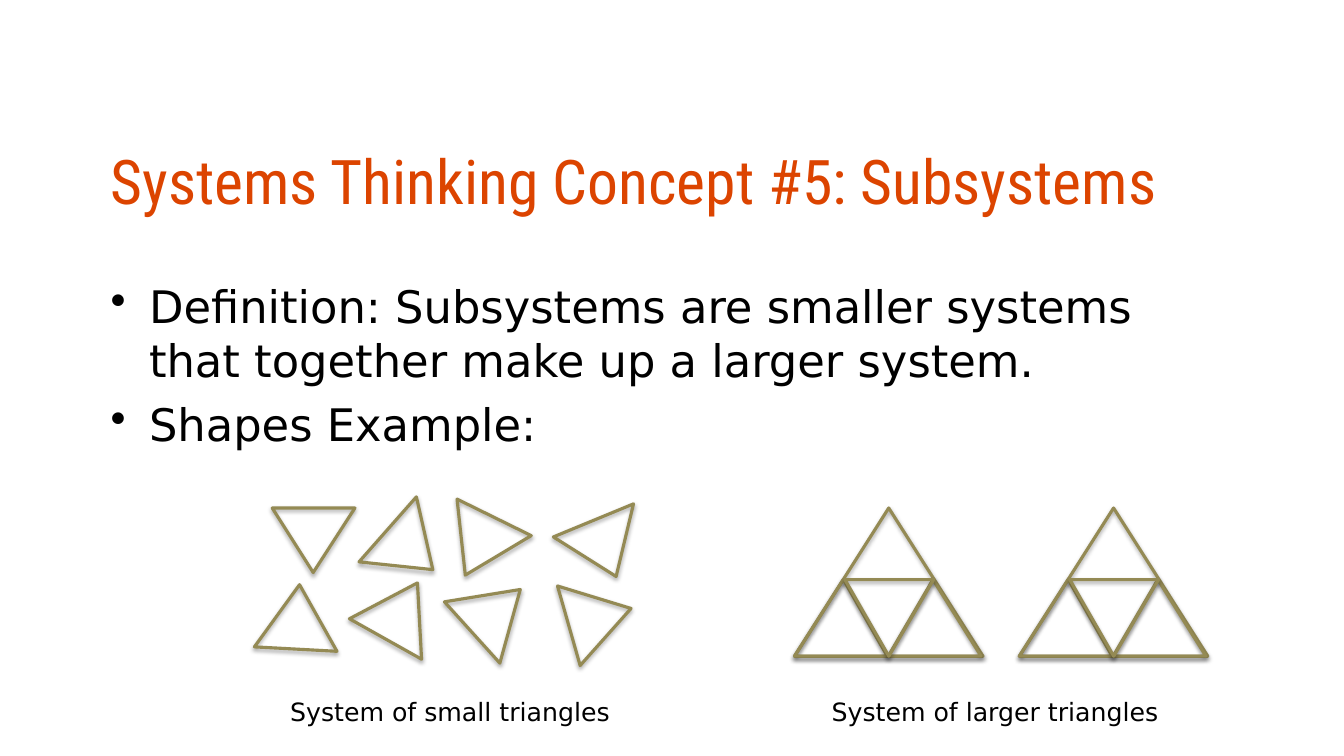
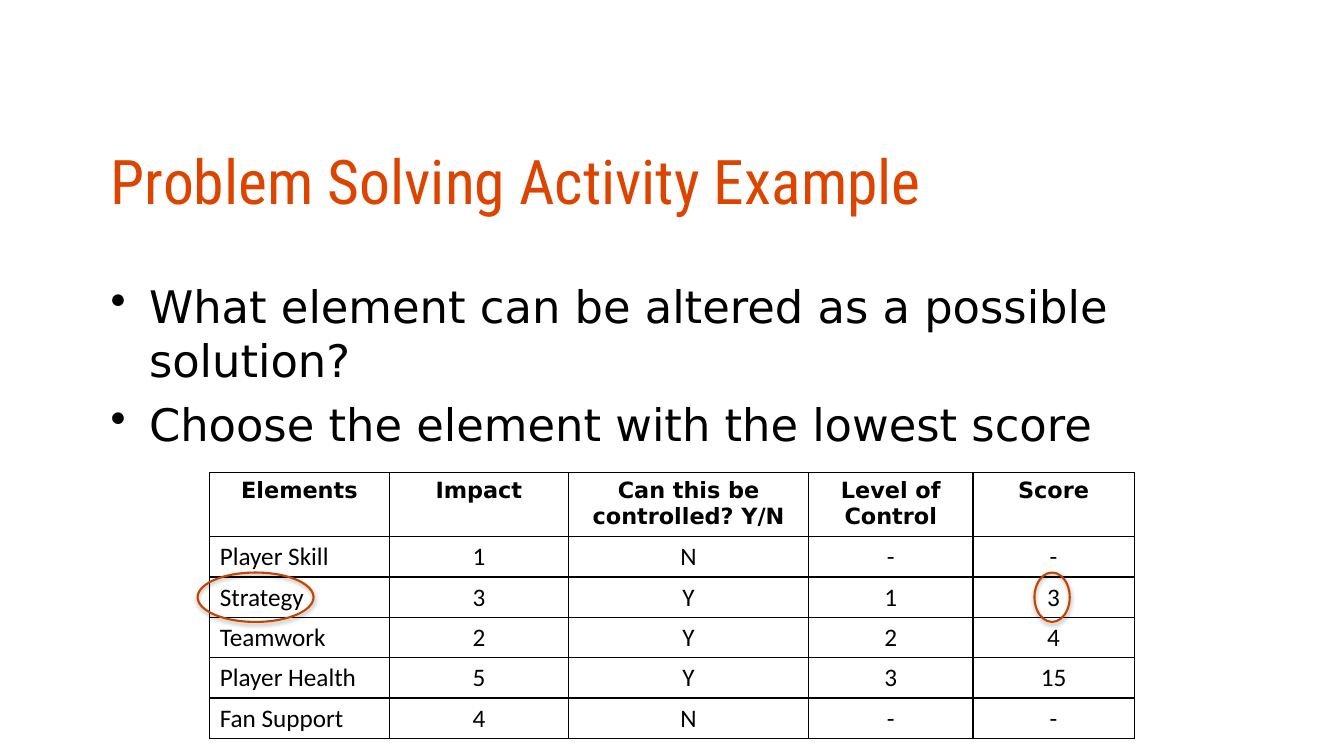
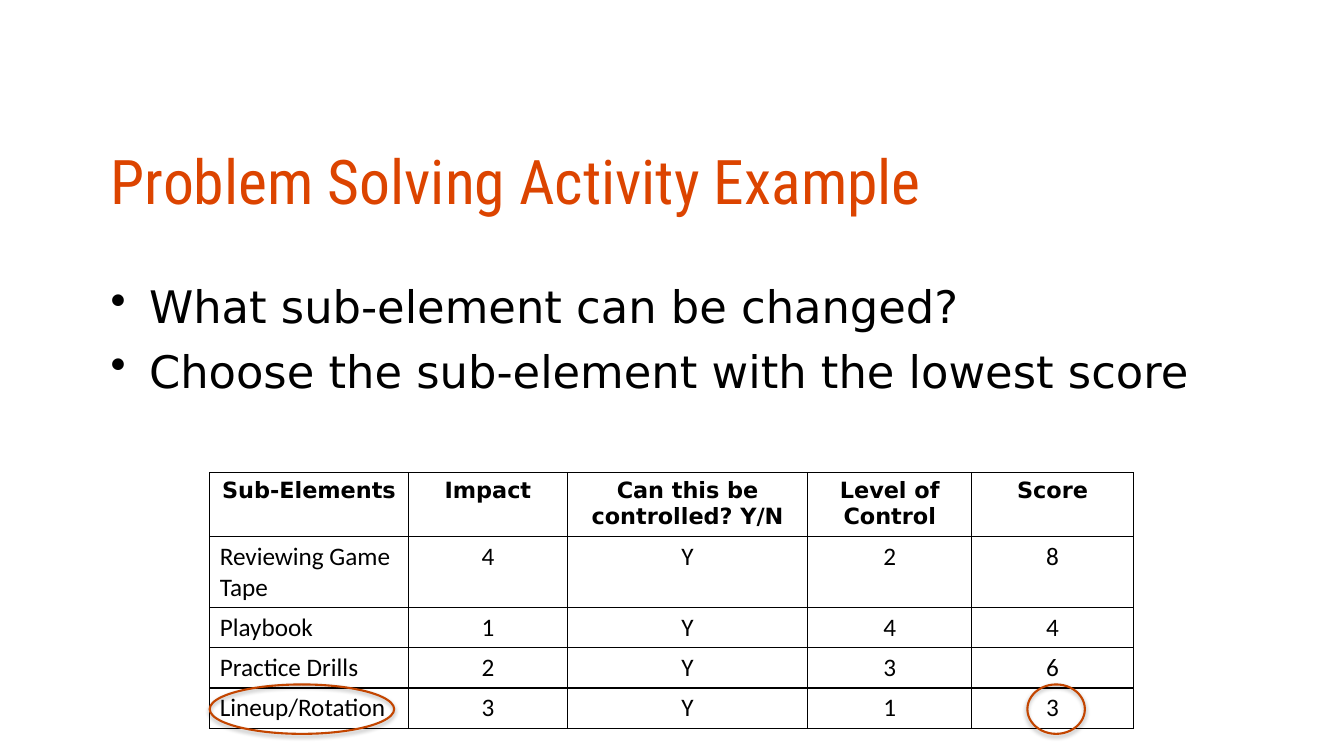
from dataclasses import dataclass

from lxml import etree
from pptx import Presentation
from pptx import util as u
from pptx.dml.color import RGBColor
from pptx.enum import shapes, text
from pptx.oxml import parse_xml
from pptx.oxml.ns import qn

SCALE = 9144  # EMU per px, 100 px to the inch
HUES = {
    "title": "DC4400",
    "text": "000000",
    "border": "000000",
    "shape": "948A54",
    "ring": "C34500",
}
HEAD, BODY, CELL = "Roboto Condensed", "DejaVu Sans", "Calibri"
SPACE = 'xmlns:a="http://schemas.openxmlformats.org/drawingml/2006/main"'
SHADE = (
    f'<a:effectLst {SPACE}><a:outerShdw blurRad="40000" dist="23000" dir="5400000" '
    'rotWithShape="0"><a:srgbClr val="000000"><a:alpha val="35000"/></a:srgbClr>'
    "</a:outerShdw></a:effectLst>"
)


@dataclass(frozen=True)
class Box:
    left: int
    top: int
    width: int
    height: int

    def emu(self) -> tuple:
        return tuple(px(n) for n in (self.left, self.top, self.width, self.height))


@dataclass(frozen=True)
class Type:
    face: str
    size: int
    hue: str = "text"
    bold: bool = False


@dataclass(frozen=True)
class Shape:
    box: Box
    turn: float = 0
    peak: float = 0.505


@dataclass(frozen=True)
class Score:
    """A slide with a score table and rings around the chosen row."""
    points: tuple
    cols: tuple
    rows: tuple
    rings: tuple


TITLE = Type(HEAD, 44, "title")
POINT = Type(BODY, 32)
NOTE = Type(BODY, 18)
TOP = Type(BODY, 16, bold=True)
ITEM = Type(CELL, 18)

SMALL = (
    Shape(Box(270, 504, 82, 64), 180),
    Shape(Box(364, 515, 86, 60), 131.4),
    Shape(Box(451, 574, 82, 64), 47.9),
    Shape(Box(254, 580, 82, 64), 3.1),
    Shape(Box(435, 510, 82, 64), 206.2),
    Shape(Box(557, 514, 86, 60), 157.6),
    Shape(Box(554, 580, 82, 64), 74.1),
    Shape(Box(357, 574, 82, 64), 29.3),
)
# Parts of a large triangle, measured from its left edge
LARGE = (
    Shape(Box(0, 504, 187, 147), peak=0.5),
    Shape(Box(0, 575, 92, 76), peak=0.527),
    Shape(Box(93, 575, 92, 76), peak=0.482),
    Shape(Box(50, 575, 88, 76), 180),
)
LABELS = (
    ("System of small triangles", Box(278, 686, 373, 46)),
    ("System of larger triangles", Box(815, 686, 391, 46)),
)
ASKS = ("Impact", "Can this be controlled? Y/N", "Level of Control", "Score")
SCORES = (
    Score(
        ("What element can be altered as a possible solution?",
         "Choose the element with the lowest score"),
        (178, 178, 238, 163, 160),
        (
            ("Elements", *ASKS),
            ("Player Skill", "1", "N", "-", "-"),
            ("Strategy", "3", "Y", "1", "3"),
            ("Teamwork", "2", "Y", "2", "4"),
            ("Player Health", "5", "Y", "3", "15"),
            ("Fan Support", "4", "N", "-", "-"),
        ),
        (Box(1026, 568, 35, 49), Box(196, 568, 115, 49)),
    ),
    Score(
        ("What sub-element can be changed?",
         "Choose the sub-element with the lowest score"),
        (197, 158, 238, 163, 160),
        (
            ("Sub-Elements", *ASKS),
            ("Reviewing Game Tape", "4", "Y", "2", "8"),
            ("Playbook", "1", "Y", "4", "4"),
            ("Practice Drills", "2", "Y", "3", "6"),
            ("Lineup/Rotation", "3", "Y", "1", "3"),
        ),
        (Box(1019, 679, 57, 49), Box(208, 679, 183, 49)),
    ),
)


def px(count: int) -> int:
    return count * SCALE


def tint(name: str) -> RGBColor:
    return RGBColor.from_string(HUES[name])


def add_run(para, words: str, style: Type) -> None:
    run = para.add_run()
    run.text = words
    font = run.font
    font.name, font.size, font.bold = style.face, u.Pt(style.size), style.bold
    font.color.rgb = tint(style.hue)


def add_text(slide, box: Box, lines: tuple, style: Type, dots: bool = False) -> None:
    frame = slide.shapes.add_textbox(*box.emu()).text_frame
    frame.word_wrap = True
    for i, line in enumerate(lines):
        para = frame.add_paragraph() if i else frame.paragraphs[0]
        if dots:
            props = para._p.get_or_add_pPr()
            props.set("marL", str(px(38)))
            props.set("indent", str(px(-38)))
            etree.SubElement(props, qn("a:buChar")).set("char", "•")
        if i:
            para.space_before = u.Pt(7.4)
        add_run(para, line, style)


def add_line(tree, kind, box: Box, hue: str, width: float):
    """Add an unfilled, shadowed outline."""
    shape = tree.add_shape(kind, *box.emu())
    shape.fill.background()
    shape.line.color.rgb = tint(hue)
    shape.line.width = u.Pt(width)
    shape._element.spPr.append(parse_xml(SHADE))
    return shape


def add_tri(tree, part: Shape, shift: int = 0) -> None:
    box = part.box
    place = Box(box.left + shift, box.top, box.width, box.height)
    kind = shapes.MSO_SHAPE.ISOSCELES_TRIANGLE
    shape = add_line(tree, kind, place, "shape", 2.25)
    shape.adjustments[0] = part.peak
    shape.rotation = part.turn


def add_edge(cell) -> None:
    props = cell._tc.get_or_add_tcPr()
    for side in "LRTB":
        props.append(parse_xml(
            f'<a:ln{side} {SPACE} w="12700"><a:solidFill>'
            f'<a:srgbClr val="{HUES["border"]}"/></a:solidFill></a:ln{side}>'))
    cell.fill.background()


def add_grid(slide, cols: tuple, rows: tuple) -> None:
    box = Box(208, 469, sum(cols), 40 * len(rows))
    grid = slide.shapes.add_table(len(rows), len(cols), *box.emu()).table
    grid.first_row = grid.horz_banding = False
    for col, width in zip(grid.columns, cols):
        col.width = px(width)
    for r, row in enumerate(rows):
        for c, words in enumerate(row):
            cell = grid.cell(r, c)
            add_edge(cell)
            para = cell.text_frame.paragraphs[0]
            left = r > 0 and c == 0
            para.alignment = text.PP_ALIGN.LEFT if left else text.PP_ALIGN.CENTER
            add_run(para, words, ITEM if r else TOP)


def add_slide(deck, title: str, points: tuple):
    slide = deck.slides.add_slide(deck.slide_layouts[6])
    add_text(slide, Box(100, 137, 1133, 130), (title,), TITLE)
    add_text(slide, Box(100, 272, 1133, 403), points, POINT, dots=True)
    return slide


def draw_parts(deck) -> None:
    slide = add_slide(deck, "Systems Thinking Concept #5: Subsystems", (
        "Definition: Subsystems are smaller systems that together make up a larger system.",
        "Shapes Example:"))
    for part in SMALL:
        add_tri(slide.shapes, part)
    for left in (788, 1011):
        group = slide.shapes.add_group_shape()
        for part in LARGE:
            add_tri(group.shapes, part, left)
    for words, box in LABELS:
        add_text(slide, box, (words,), NOTE)


def draw_score(deck, score: Score) -> None:
    slide = add_slide(deck, "Problem Solving Activity Example", score.points)
    add_grid(slide, score.cols, score.rows)
    for ring in score.rings:
        add_line(slide.shapes, shapes.MSO_SHAPE.OVAL, ring, "ring", 1.5)


def main() -> None:
    deck = Presentation()
    deck.slide_width, deck.slide_height = px(1333), px(750)
    draw_parts(deck)
    for score in SCORES:
        draw_score(deck, score)
    deck.save("out.pptx")


if __name__ == "__main__":
    main()
